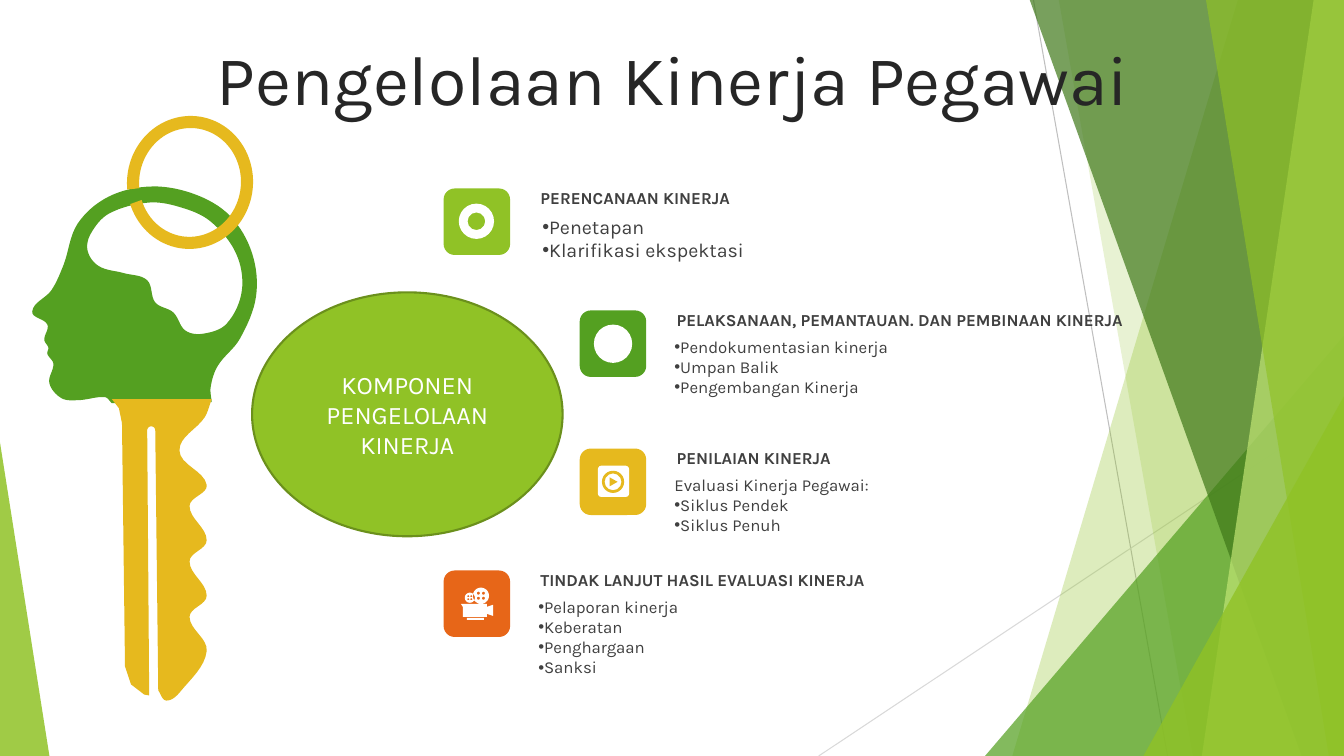
from math import cos, dist, pi, sin

from lxml import etree
from pptx import Presentation
from pptx.dml.color import RGBColor
from pptx.enum.shapes import MSO_CONNECTOR, MSO_SHAPE
from pptx.enum.text import MSO_ANCHOR, MSO_AUTO_SIZE, PP_ALIGN
from pptx.oxml.ns import qn
from pptx.util import Pt

PX = 9144  # 100 px to the inch
WIDE, HIGH = 1333, 750
FONT = "Karla"
LINE, TRI, TILE = MSO_CONNECTOR.STRAIGHT, MSO_SHAPE.ISOSCELES_TRIANGLE, MSO_SHAPE.ROUNDED_RECTANGLE
OVAL, DONUT, ARC = MSO_SHAPE.OVAL, MSO_SHAPE.DONUT, MSO_SHAPE.BLOCK_ARC
MID, CENTER, FIXED = MSO_ANCHOR.MIDDLE, PP_ALIGN.CENTER, MSO_AUTO_SIZE.NONE

LIME, GREEN = RGBColor(0x90, 0xC2, 0x26), RGBColor(0x54, 0xA0, 0x21)
DARK, PALE = RGBColor(0x3F, 0x78, 0x19), RGBColor(0xC0, 0xE4, 0x74)
GOLD, ORANGE = RGBColor(0xE6, 0xB9, 0x1E), RGBColor(0xE7, 0x66, 0x18)
WHITE, EDGE = RGBColor(0xFF, 0xFF, 0xFF), RGBColor(0x6B, 0x90, 0x1C)
INK, GRAY = RGBColor(0x26, 0x26, 0x26), RGBColor(0x40, 0x40, 0x40)
RULE, FAINT = RGBColor(0xBF, 0xBF, 0xBF), RGBColor(0xD9, 0xD9, 0xD9)

TITLE = "Pengelolaan Kinerja Pegawai"
HUB = "KOMPONEN PENGELOLAAN KINERJA"

# Tile x, y, colour, icon; heading and its height; list indent, text size, line pitch, list
PARTS = [
    (440, 187, LIME, "lens", "PERENCANAAN KINERJA", 30, 88, 14, 23,
     ["Penetapan", "Klarifikasi ekspektasi"]),
    (440, 566, ORANGE, "camera", "TINDAK LANJUT HASIL EVALUASI KINERJA", 30, 84, 12, 20,
     ["Pelaporan kinerja", "Keberatan", "Penghargaan", "Sanksi"]),
    (575, 445, GOLD, "play", "PENILAIAN KINERJA", 50, 84, 12, 20,
     ["Evaluasi Kinerja Pegawai:", "Siklus Pendek", "Siklus Penuh"]),
    (575, 308, GREEN, "disc", "PELAKSANAAN, PEMANTAUAN. DAN PEMBINAAN KINERJA", 50, 84, 12, 20,
     ["Pendokumentasian kinerja", "Umpan Balik", "Pengembangan Kinerja"]),
]

RAYS = [((1025, 0), (1158, 750), RULE), ((1333, 403), (812, 750), FAINT)]
# Band: x at top and foot of its slanted side. Wedge: left, top, width, tip.
BACKDROP = [
    ("band", (1228, 1004), LIME, 30),
    ("band", (1050, 1183), LIME, 20),
    ("wedge", (977, 333, 356, 1), GREEN, 72),
    ("band", (1021, 1291), DARK, 70),
    ("band", (1303, 1192), PALE, 70),
    ("band", (1196, 1318), LIME, 65),
    ("wedge", (1134, 393, 199, 1), LIME, 80),
    ("wedge", (0, 439, 49, 0), LIME, 85),
]

# Head: a few landmarks, joined by a smooth curve
SKULL = {
    "neck": (210, 399), "nape": (209, 384), "hollow": (216, 363), "base": (238, 336),
    "back": (254, 294), "rear": (250, 251), "top rear": (228, 214), "top": (194, 193),
    "crown": (151, 185), "hairline": (108, 195), "forehead": (77, 222), "brow": (63, 263),
    "bridge": (51, 288), "nose": (32, 309), "nostril": (47, 322), "upper lip": (44, 337),
    "mouth": (48, 345), "lower lip": (47, 351), "dimple": (53, 361), "chin": (49, 380),
    "jaw": (61, 395), "throat": (78, 397), "collar": (104, 394), "front": (111, 400),
}
BRAIN = {
    "crown": (147, 201), "front": (108, 212), "brow": (90, 232), "tip": (87, 249),
    "under": (98, 264), "fold": (123, 271), "bend": (146, 278), "stem": (154, 300),
    "notch": (172, 310), "lobe": (184, 328), "base": (202, 331), "rear": (225, 321),
    "back": (240, 288), "top rear": (234, 251), "top": (208, 219), "dome": (177, 205),
}
# Blade: teeth repeat down its right side, a slit runs up its middle
TEETH, PITCH = 4, 55
GAP, TOOTH = (188, 447), (205, 481)
SLIT = (150, 427, 4)

deck = Presentation()
deck.slide_width, deck.slide_height = WIDE * PX, HIGH * PX
slide = deck.slides.add_slide(deck.slide_layouts[5])
shapes = slide.shapes


def ring(cx, cy, r, turn=2, steps=32):
    """Points on a circle, anticlockwise from its right; turn is in units of pi."""
    angles = [turn * pi * k / steps for k in range(steps + 1)]
    return [(cx + r * cos(a), cy - r * sin(a)) for a in angles]


def smooth(knots, closed=False, steps=8):
    """Curve through the knots, parallel at each one to the line between its neighbours."""
    n = len(knots)
    slopes = []
    for k in range(n):
        a = knots[k - 1] if k or closed else knots[0]
        b = knots[(k + 1) % n] if k < n - 1 or closed else knots[k]
        slopes.append([(q - p) / dist(a, b) for p, q in zip(a, b)])
    pts = [knots[0]]
    for k in range(n if closed else n - 1):
        j = (k + 1) % n
        start, end = knots[k], knots[j]
        reach = dist(start, end) / 3
        for step in range(1, steps + 1):
            t, u = step / steps, 1 - step / steps
            pts.append(tuple(
                u**3 * p + 3 * u * u * t * (p + reach * v)
                + 3 * u * t * t * (q - reach * w) + t**3 * q
                for p, q, v, w in zip(start, end, slopes[k], slopes[j])))
    return pts


def paint(shape, fill, alpha=100):
    shape.shadow.inherit = False
    shape.fill.solid()
    shape.fill.fore_color.rgb = fill
    shape.line.fill.background()
    if alpha < 100:
        tint = shape.element.xpath("./p:spPr/a:solidFill/a:srgbClr")[0]
        etree.SubElement(tint, qn("a:alpha")).set("val", str(alpha * 1000))
    return shape


def block(kind, box, fill, alpha=100):
    return paint(shapes.add_shape(kind, *(v * PX for v in box)), fill, alpha)


def outline(loops, fill, alpha=100):
    pen = None
    for loop in loops:
        head, *rest = [(round(x * PX), round(y * PX)) for x, y in loop]
        if pen is None:
            pen = shapes.build_freeform(*head)
        else:
            pen.move_to(*head)
        pen.add_line_segments(rest, close=True)
    return paint(pen.convert_to_shape(), fill, alpha)


def write(shape, lines, size, color, bold=False):
    frame = shape.text_frame
    frame.word_wrap, frame.auto_size = True, FIXED
    frame.text = "\n".join(lines)
    for para in frame.paragraphs:
        font = para.runs[0].font
        font.name, font.size, font.bold, font.color.rgb = FONT, Pt(size), bold, color
    return frame


def label(box, *style):
    return write(shapes.add_textbox(*(v * PX for v in box)), *style)


def bullet(para):
    props = para._p.get_or_add_pPr()
    etree.SubElement(props, qn("a:buFont")).set("typeface", "Arial")
    etree.SubElement(props, qn("a:buChar")).set("char", "•")


def draw_icon(name, x, y, color):
    if name == "lens":
        block(DONUT, (x + 15, y + 15, 35, 35), WHITE)
    elif name == "disc":
        block(OVAL, (x + 14, y + 14, 38, 38), WHITE)
    elif name == "play":
        block(TILE, (x + 18, y + 17, 31, 31), WHITE).adjustments[0] = 0.11
        block(DONUT, (x + 22, y + 22, 22, 22), color).adjustments[0] = 0.12
        block(TRI, (x + 29, y + 29, 9, 8), color).rotation = 90
    else:
        stand = [(23, 47), (40, 47), (40, 49), (23, 49)]
        body = [(17, 33), (43, 33), (43, 36), (49, 34), (49, 45),
                (43, 43), (43, 46), (19, 46), (19, 36)]
        loops = [stand, body]
        for cx, cy, r, off, hole in ((37, 25, 8, 2.5, 1.5), (26, 27, 5, 1.5, 1)):
            loops.append(ring(cx, cy, r))
            loops += [ring(cx + i, cy + j, hole) for i in (-off, off) for j in (-off, off)]
        outline([[(x + i, y + j) for i, j in loop] for loop in loops], WHITE)


# Backdrop
for start, end, color in RAYS:
    ray = shapes.add_connector(LINE, *(v * PX for v in start + end))
    ray.line.color.rgb, ray.line.width = color, Pt(0.75)
    etree.SubElement(ray.element.spPr, qn("a:effectLst"))
for kind, dims, color, alpha in BACKDROP:
    if kind == "band":
        top, foot = dims
        outline([[(top, -1), (WIDE, -1), (WIDE, HIGH), (foot, HIGH)]], color, alpha)
    else:
        x, y, width, tip = dims
        block(TRI, (x, y, width, HIGH - y), color, alpha).adjustments[0] = tip

# Title, in front of the backdrop
title = shapes.title
title.element.getparent().append(title.element)
title.left, title.top, title.width, title.height = (v * PX for v in (35, 37, 1266, 79))
frame = write(title, [TITLE], 50, INK)
frame.vertical_anchor = MID
frame.paragraphs[0].alignment, frame.paragraphs[0].space_before = CENTER, Pt(10)

# Four components
for x, y, color, icon, name, tall, dent, size, pitch, items in PARTS:
    block(TILE, (x, y, 66, 66), color)
    draw_icon(icon, x, y, color)
    frame = label((x + dent, y + 21, 518, 11 + pitch * len(items)), items, size, GRAY)
    for para in frame.paragraphs:
        if not para.text.endswith(":"):
            bullet(para)
    frame = label((x + 84, y - 6, 518, tall), [name], 12, GRAY, True)
    frame.margin_left = frame.margin_right = 12 * PX

# Key: head, ring and blade
outline([smooth(list(BRAIN.values()), closed=True), smooth(list(SKULL.values()))], GREEN)
loop = block(ARC, (126, 115, 125, 132), GOLD)
loop.rotation = 5.4
for k, value in enumerate((100.885, 92.806, 0.096)):  # start, end, thickness
    loop.adjustments[k] = value
teeth = [(210, 396), (203, 414), (178, 447), TOOTH]
for k in range(1, TEETH):
    teeth += [(x, y + k * PITCH) for x, y in (GAP, TOOTH)]
point = [(179, 686), (165, 695), (157, 685)]
shank = [(148, 690), (143, 689), (130, 679), (124, 661), (121, 420), (118, 405), (111, 396)]
outline([smooth(teeth + point) + ring(*SLIT, turn=1) + shank], GOLD)

# Hub
hub = block(OVAL, (250, 290, 308, 242), LIME)
hub.line.color.rgb, hub.line.width = EDGE, Pt(1.5)
frame = write(hub, [HUB], 18, WHITE)
frame.vertical_anchor = MID
frame.paragraphs[0].alignment = CENTER

deck.save("out.pptx")
